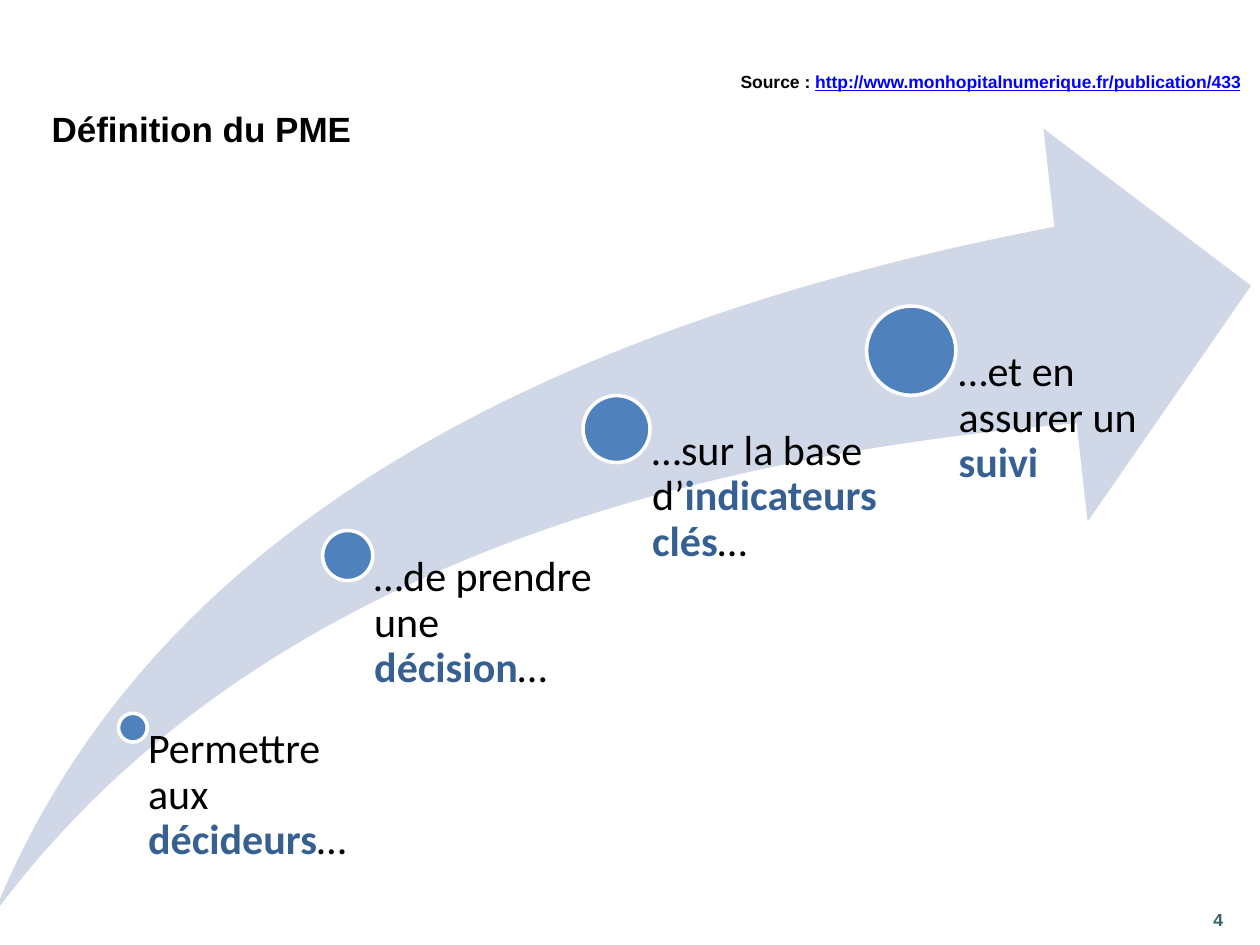
from pptx import Presentation
from pptx.dml.color import RGBColor
from pptx.enum.shapes import MSO_SHAPE
from pptx.enum.text import MSO_ANCHOR, PP_ALIGN
from pptx.util import Cm, Pt

SWOOSH, OVAL = MSO_SHAPE.SWOOSH_ARROW, MSO_SHAPE.OVAL
TOP, MIDDLE = MSO_ANCHOR.TOP, MSO_ANCHOR.MIDDLE
LEFT = PP_ALIGN.LEFT
COLORS = {"text": "000000", "key": "376092", "dot": "4F81BD", "arrow": "D0D8E8",
          "rim": "FFFFFF", "link": "0000FF", "page": "36616C"}
STEPS = [
    (2.81, 12.08, 0.58, 4.34, "Permettre aux ", "décideurs", "…"),
    (7.14, 8.61, 1.01, 5.32, "…de prendre une ", "décision", "…"),
    (12.56, 6.06, 1.35, 5.32, "…sur la base d’", "indicateurs clés", "…"),
    (18.5, 4.48, 1.8, 5.32, "…et en assurer un ", "suivi", ""),
]


def color(name):
    """Return the named colour."""
    return RGBColor.from_string(COLORS[name])


def add_text(slide, box, runs, size, font="Arial", anchor=TOP, wrap=True):
    """Add a text box of (text, colour, bold, underline) runs and return its frame."""
    frame = slide.shapes.add_textbox(*map(Cm, box)).text_frame
    frame.word_wrap = wrap
    frame.vertical_anchor = anchor
    para = frame.paragraphs[0]
    para.alignment = LEFT
    for text, tint, bold, under in runs:
        run = para.add_run()
        run.text = text
        run.font.name, run.font.size = font, Pt(size)
        run.font.bold, run.font.underline = bold, under
        run.font.color.rgb = color(tint)
    return frame


def add_solid(slide, kind, box, fill):
    """Add a flat preset shape without outline."""
    shape = slide.shapes.add_shape(kind, *map(Cm, box))
    shape.shadow.inherit = False
    shape.fill.solid()
    shape.fill.fore_color.rgb = color(fill)
    shape.line.fill.background()
    return shape


def add_step(slide, box, step):
    """Add one dot on the arrow and the label that hangs from its centre."""
    left, top, _, height = box
    x, y, size, width, lead, key, tail = step
    dot = add_solid(slide, OVAL, (left + x - size / 2, top + y - size / 2, size, size), "dot")
    dot.line.color.rgb = color("rim")
    dot.line.width = Pt(2)
    runs = [(lead, "text", False, False), (key, "key", True, False)]
    if tail:
        runs.append((tail, "text", False, False))
    frame = add_text(slide, (left + x, top + y, width, height - y), runs, 24, "Calibri")
    frame.margin_left = Cm(size * 0.53)
    frame.margin_top = frame.margin_right = frame.margin_bottom = 0
    frame.paragraphs[0].line_spacing = 0.9


def add_path(slide, box):
    """Add the rising arrow with its steps."""
    arrow = add_solid(slide, SWOOSH, box, "arrow")
    arrow.adjustments[0] = arrow.adjustments[1] = 0.25
    for step in STEPS:
        add_step(slide, box, step)


def add_frame(slide, box):
    """Add the title, the source line and the page number."""
    left, top, width, height = box
    add_text(slide, (left + 0.79, top + 1.98, 24.26, 1.24),
             [("Définition du PME", "text", True, False)], 20, anchor=MIDDLE)
    add_text(slide, (left + width - 10.72, top + 1.3, 10.72, 0.69),
             [("Source : ", "text", True, False),
              ("http://www.monhopitalnumerique.fr/publication/433", "link", True, True)],
             10, wrap=False)
    add_text(slide, (left + width - 1.19, top + height - 1.02, 1.19, 1.02),
             [("4", "page", True, False)], 10, anchor=MIDDLE)


def main():
    """Build and save the slide."""
    deck = Presentation()
    deck.slide_width, deck.slide_height = Cm(25.4), Cm(19.05)
    slide = deck.slides.add_slide(deck.slide_layouts[6])
    add_path(slide, (-0.13, 2.59, 25.35, 15.85))
    add_frame(slide, (0, 0, 25.4, 19.05))
    deck.save("out.pptx")


if __name__ == "__main__":
    main()
